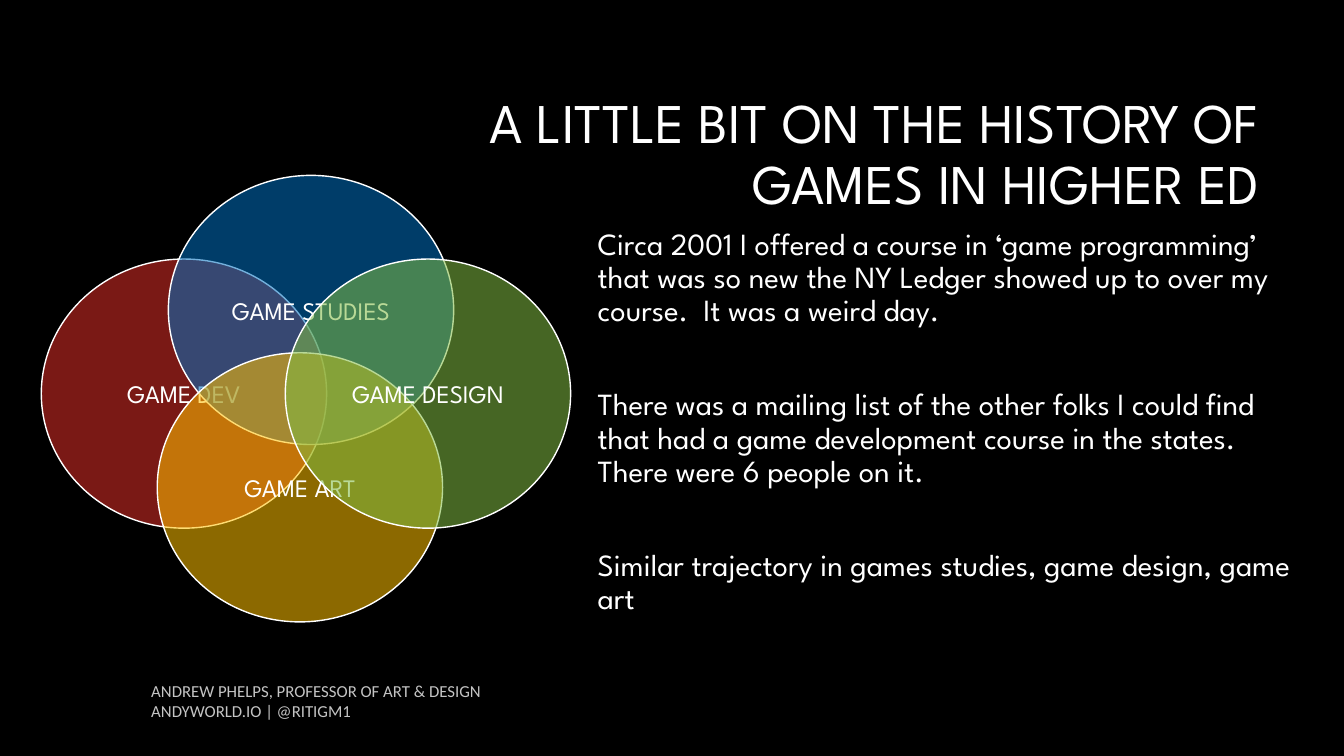
"""Build a slide on the history of games in higher education."""
import dataclasses

import lxml.etree
import pptx
import pptx.dml.color
import pptx.enum.shapes
import pptx.enum.text
import pptx.oxml.ns
import pptx.util

Inches = pptx.util.Inches
Pt = pptx.util.Pt
ALIGN = pptx.enum.text.PP_ALIGN
ANCHOR = pptx.enum.text.MSO_ANCHOR


@dataclasses.dataclass(frozen=True)
class Theme:
    """Hold the colours, fonts and type sizes of the slide."""
    background: str = "000000"
    text: str = "FFFFFF"
    muted: str = "C4C4C4"
    dev: str = "DF2E28"
    studies: str = "0070C0"
    art: str = "FFC000"
    design: str = "81BB42"
    circle_opacity: int = 55
    display_font: str = "League Spartan"
    footer_font: str = "Calibri"
    title_size: int = 40
    body_size: int = 22
    label_size: int = 18
    footer_size: int = 12


THEME = Theme()

CIRCLE_SIZE = (2.83, 2.67)
CIRCLES = [
    ("GAME DEV", THEME.dev, 0.41, 2.57),
    ("GAME STUDIES", THEME.studies, 1.67, 1.74),
    ("GAME ART", THEME.art, 1.56, 3.5),
    ("GAME DESIGN", THEME.design, 2.83, 2.57),
]
FOOTER = ["ANDREW PHELPS, PROFESSOR OF ART & DESIGN", "ANDYWORLD.IO | @RITIGM1"]
TITLE = ["A LITTLE BIT ON THE HISTORY OF GAMES IN HIGHER ED"]
HISTORY = [
    "Circa 2001 I offered a course in ‘game programming’ that was so new "
    "the NY Ledger showed up to over my course.  It was a weird day.",
    "There was a mailing list of the other folks I could find that had a game "
    "development course in the states.  There were 6 people on it.",
    "Similar trajectory in games studies, game design, game art",
]


def rgb(value):
    """Turn a hex string into a colour."""
    return pptx.dml.color.RGBColor.from_string(value)


def apply_format(target, values):
    """Set each named attribute of the target."""
    for name, value in values.items():
        setattr(target, name, value)


def write_text(frame, lines, size, font=THEME.display_font, color=THEME.text,
               gap=0, frame_format=None, paragraph_format=None):
    """Write the lines as paragraphs with the given gap between them."""
    apply_format(frame, {"word_wrap": True, **(frame_format or {})})
    for index, line in enumerate(lines):
        paragraph = frame.add_paragraph() if index else frame.paragraphs[0]
        paragraph.text = line
        apply_format(paragraph, {"space_before": Pt(gap if index else 0),
                                 **(paragraph_format or {})})
        apply_format(paragraph.font, {"name": font, "size": Pt(size)})
        paragraph.font.color.rgb = rgb(color)


def add_text(slide, box, lines, size, **options):
    """Add a text box at left, top, width and height."""
    shape = slide.shapes.add_textbox(*map(Inches, box))
    write_text(shape.text_frame, lines, size, **options)


def add_circle(slide, label, color, left, top):
    """Add one translucent, labelled circle of the Venn diagram."""
    shape = slide.shapes.add_shape(
        pptx.enum.shapes.MSO_SHAPE.OVAL,
        *map(Inches, (left, top, *CIRCLE_SIZE)))
    shape.shadow.inherit = False
    shape.fill.solid()
    shape.fill.fore_color.rgb = rgb(color)
    fill_color = shape.fill._xPr.find(".//" + pptx.oxml.ns.qn("a:srgbClr"))
    lxml.etree.SubElement(fill_color, pptx.oxml.ns.qn("a:alpha"),
                          val=str(THEME.circle_opacity * 1000))
    shape.line.color.rgb = rgb(THEME.text)
    shape.line.width = Pt(1)
    write_text(shape.text_frame, [label], THEME.label_size,
               frame_format={"vertical_anchor": ANCHOR.MIDDLE},
               paragraph_format={"alignment": ALIGN.CENTER})


def main():
    """Create the presentation and save it."""
    presentation = pptx.Presentation()
    apply_format(presentation, {"slide_width": Inches(13.33),
                                "slide_height": Inches(7.5)})
    slide = presentation.slides.add_slide(presentation.slide_layouts[6])
    slide.background.fill.solid()
    slide.background.fill.fore_color.rgb = rgb(THEME.background)

    margins = ("margin_left", "margin_top", "margin_right", "margin_bottom")
    add_text(slide, (1.5, 6.75, 7.25, 0.5), FOOTER, THEME.footer_size,
             font=THEME.footer_font, color=THEME.muted,
             frame_format=dict.fromkeys(margins, 0))
    add_text(slide, (3.17, 0.84, 9.42, 1.41), TITLE, THEME.title_size,
             frame_format={"vertical_anchor": ANCHOR.MIDDLE},
             paragraph_format={"alignment": ALIGN.RIGHT, "line_spacing": 0.9})
    add_text(slide, (5.83, 2.22, 7.17, 4.36), HISTORY, THEME.body_size,
             gap=43.5, paragraph_format={"line_spacing": 0.9})
    for circle in CIRCLES:
        add_circle(slide, *circle)

    presentation.save("out.pptx")


if __name__ == "__main__":
    main()
